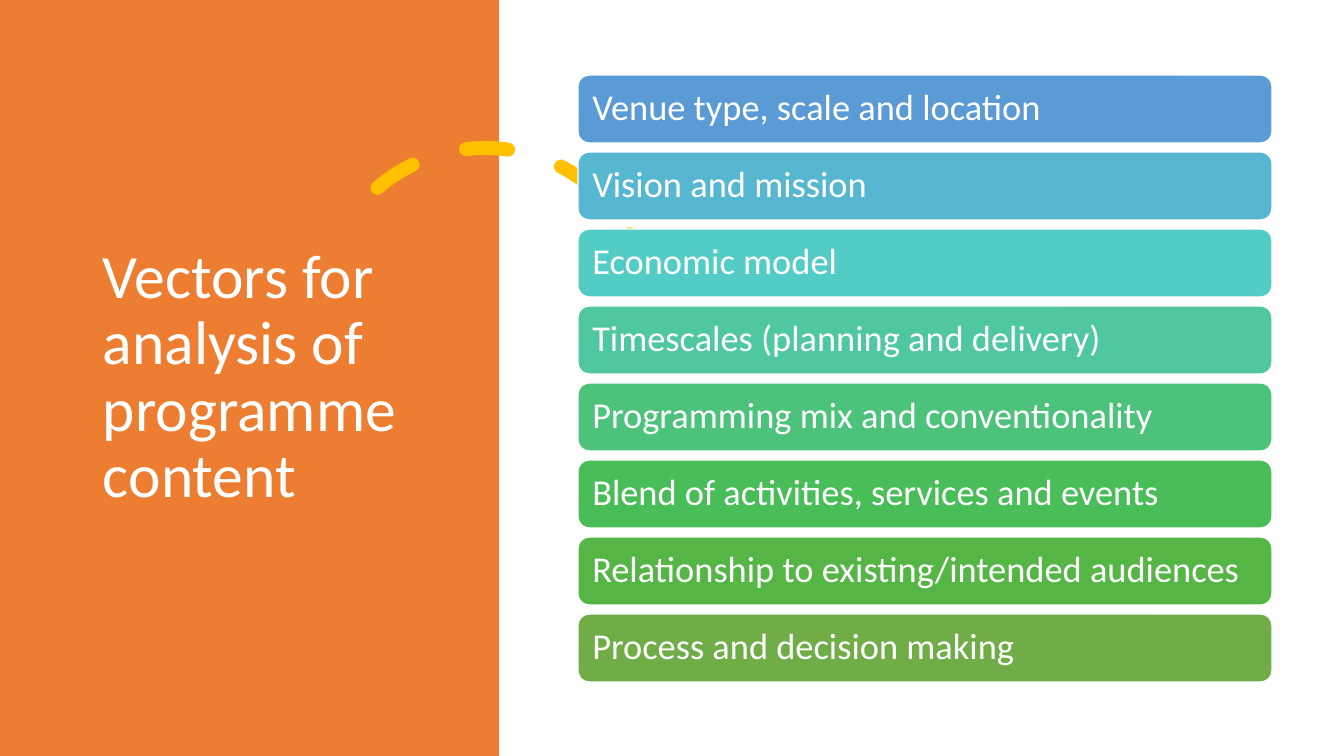
from dataclasses import dataclass

from lxml.etree import SubElement
from pptx import Presentation
from pptx.dml.color import RGBColor
from pptx.enum.dml import MSO_LINE
from pptx.enum.shapes import MSO_SHAPE
from pptx.enum.text import MSO_ANCHOR, MSO_AUTO_SIZE, PP_ALIGN
from pptx.oxml.ns import qn
from pptx.util import Pt

EMU_PER_PX = 914400 / 100.8
TITLE_ONLY = 5


@dataclass(frozen=True)
class Theme:
    font: str = "Calibri"
    title_size: int = 44
    bar_size: int = 26
    text: str = "FFFFFF"
    panel: str = "ED7D31"
    arc: str = "FFC000"
    outline: str = "FFFFFF"


THEME = Theme()

VECTORS = [
    ("Venue type, scale and location", "5B9BD5"),
    ("Vision and mission", "57B7D1"),
    ("Economic model", "53CCC5"),
    ("Timescales (planning and delivery)", "4FC7A0"),
    ("Programming mix and conventionality", "4CC27B"),
    ("Blend of activities, services and events", "48BD58"),
    ("Relationship to existing/intended audiences", "55B646"),
    ("Process and decision making", "70AD47"),
]


def px(length):
    return round(length * EMU_PER_PX)


def set_all(target, values):
    for name, value in values.items():
        setattr(target, name, value)


def add_shape(shapes, kind, place, fill=None, line=None, width=1):
    """Add a flat preset shape; place is left, top, width, height in px."""
    shape = shapes.add_shape(kind, *map(px, place))
    shape.shadow.inherit = False
    if fill:
        shape.fill.solid()
        shape.fill.fore_color.rgb = RGBColor.from_string(fill)
    else:
        shape.fill.background()
    if line:
        shape.line.color.rgb = RGBColor.from_string(line)
        shape.line.width = Pt(width)
    else:
        shape.line.fill.background()
    return shape


def write(shape, text, size, side_inset, end_inset):
    """Put one left-aligned, vertically centred paragraph in a shape."""
    frame = shape.text_frame
    set_all(frame, {
        "word_wrap": True,
        "auto_size": MSO_AUTO_SIZE.NONE,
        "vertical_anchor": MSO_ANCHOR.MIDDLE,
        "margin_left": px(side_inset),
        "margin_right": px(side_inset),
        "margin_top": px(end_inset),
        "margin_bottom": px(end_inset),
    })
    para = frame.paragraphs[0]
    set_all(para, {"alignment": PP_ALIGN.LEFT, "line_spacing": 0.9})
    span = para.add_run()
    span.text = text
    set_all(span.font, {"name": THEME.font, "size": Pt(size)})
    span.font.color.rgb = RGBColor.from_string(THEME.text)


def add_dashed_arc(page):
    arc = add_shape(page.shapes, MSO_SHAPE.ARC, (320, 148, 330, 330),
                    line=THEME.arc, width=10)
    arc.rotation = 345.8
    arc.adjustments[0] = 146.13
    arc.adjustments[1] = 0
    arc.line.dash_style = MSO_LINE.DASH
    # Round caps and joins
    outline = arc.element.spPr.find(qn("a:ln"))
    outline.set("cap", "rnd")
    SubElement(outline, qn("a:round"))


def add_title(page, text):
    title = page.shapes.title
    left, top, width, height = map(px, (93, 71, 326, 614))
    set_all(title, {"left": left, "top": top, "width": width, "height": height})
    write(title, text, THEME.title_size, side_inset=10, end_inset=5)
    # Bring the title in front of the panel
    title.element.getparent().append(title.element)


def add_bars(page, vectors):
    left, top, width, height, pitch = 578, 75, 694, 68, 77
    bars = page.shapes.add_group_shape()
    for row, (label, colour) in enumerate(vectors):
        bar = add_shape(bars.shapes, MSO_SHAPE.ROUNDED_RECTANGLE,
                        (left, top + row * pitch, width, height),
                        fill=colour, line=THEME.outline)
        write(bar, label, THEME.bar_size, side_inset=11, end_inset=11)


def main():
    deck = Presentation()
    set_all(deck, {"slide_width": px(1344), "slide_height": px(756)})
    page = deck.slides.add_slide(deck.slide_layouts[TITLE_ONLY])

    # Left panel with title
    add_shape(page.shapes, MSO_SHAPE.RECTANGLE, (0, 0, 499, 756), fill=THEME.panel)
    add_dashed_arc(page)
    add_title(page, "Vectors for analysis of programme content")

    # Stack of vectors
    add_bars(page, VECTORS)
    deck.save("out.pptx")


if __name__ == "__main__":
    main()
